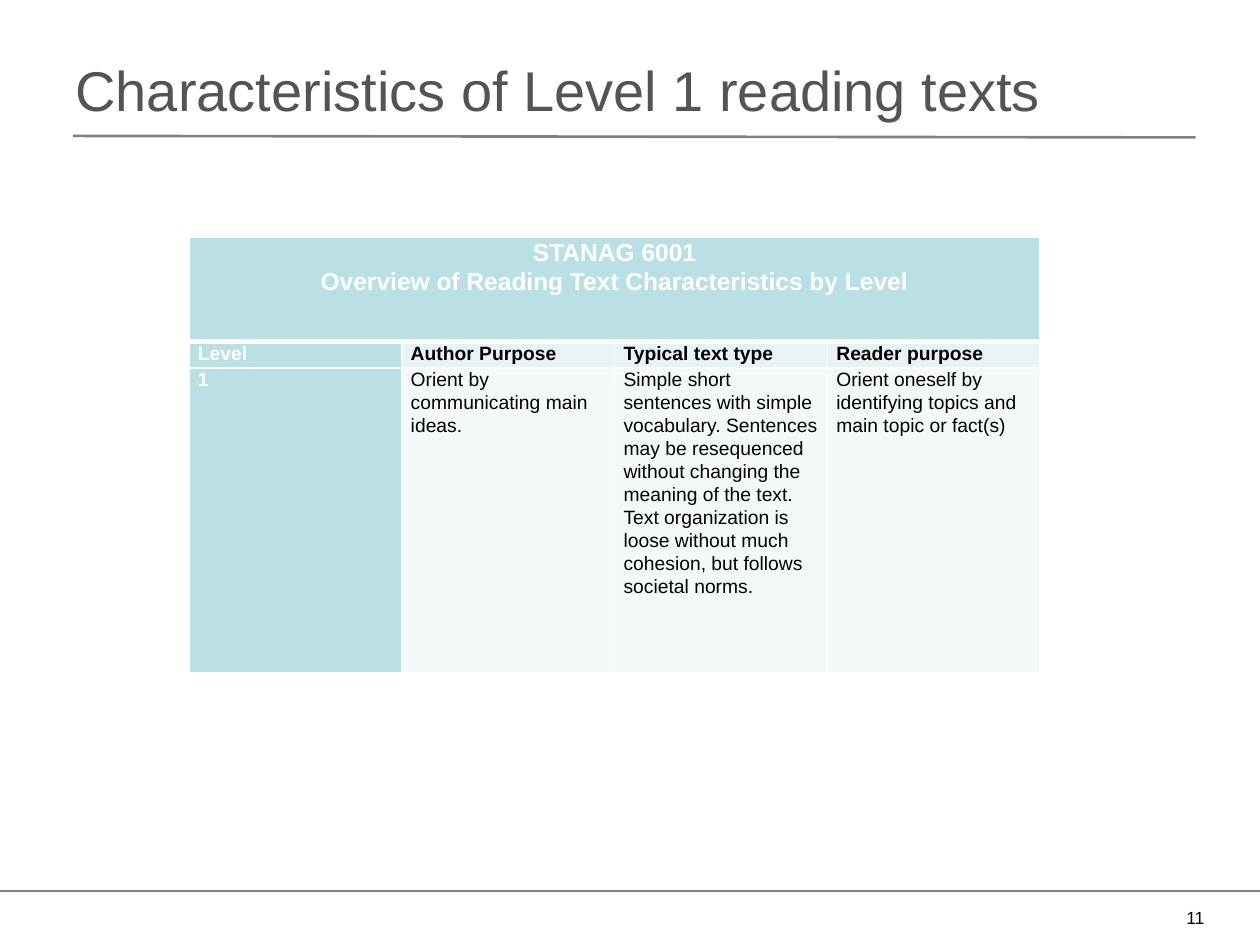
from lxml import etree
from pptx import Presentation
from pptx import util as u
from pptx.dml.color import RGBColor
from pptx.enum import shapes, text
from pptx.oxml.ns import qn

TITLE = "Characteristics of Level 1 reading texts"
PAGE_NUMBER = "11"
HEADING = ["STANAG 6001", "Overview of Reading Text Characteristics by Level"]
ROWS = [
    ["Level", "Author Purpose", "Typical text type", "Reader purpose"],
    [
        "1",
        "Orient by communicating main ideas.",
        "Simple short sentences with simple vocabulary. Sentences may be "
        "resequenced without changing the meaning of the text. Text organization "
        "is loose without much cohesion, but follows societal norms.",
        "Orient oneself by identifying topics and main topic or fact(s)",
    ],
]
RULES = [((1.47, 2.74), (24.1, 2.77), 1.5), ((0, 17.96), (25.4, 17.96), 0.75)]
TABLE_LEFT, TABLE_TOP, COLUMN_WIDTH = 3.81, 4.78, 4.29
ROW_HEIGHTS = [2.11, 0.53, 6.15]
THEME = {
    "font": "Arial",
    "title": "545454", "rule": "808080", "white": "FFFFFF", "black": "000000",
    "accent": "BBE0E3", "bands": ["E7F3F4", "F3F9FA"],
    "title_size": 32, "heading_size": 14, "body_size": 11, "number_size": 10,
}
ALIGN = text.PP_ALIGN


def write(frame, lines, size, color, bold=False, align=ALIGN.LEFT, spacing=1.0):
    """Fill a text frame with one uniformly styled paragraph per line."""
    frame.word_wrap = True
    frame.text = "\n".join(lines)
    for paragraph in frame.paragraphs:
        paragraph.alignment, paragraph.line_spacing = align, spacing
        font = paragraph.font
        font.name, font.size, font.bold = THEME["font"], u.Pt(size), bold
        font.color.rgb = RGBColor.from_string(color)


def add_text(slide, box, line, size, color, anchor, align):
    """Add a one-line text box."""
    frame = slide.shapes.add_textbox(*map(u.Cm, box)).text_frame
    frame.vertical_anchor = anchor
    write(frame, [line], size, color, align=align)


def add_rule(slide, start, end, width):
    """Add a thin grey rule without a shadow."""
    rule = slide.shapes.add_connector(
        shapes.MSO_CONNECTOR.STRAIGHT, *map(u.Cm, start + end))
    rule.line.color.rgb = RGBColor.from_string(THEME["rule"])
    rule.line.width = u.Pt(width)
    etree.SubElement(rule._element.spPr, qn("a:effectLst"))


def style_cell(cell, fill, top, bottom):
    """Set the borders, fill and margins of a cell."""
    properties = cell._tc.get_or_add_tcPr()
    for side, width in zip("LRTB", (1, 1, top, bottom)):
        border = etree.SubElement(properties, qn(f"a:ln{side}"), w=str(u.Pt(width)))
        solid = etree.SubElement(border, qn("a:solidFill"))
        etree.SubElement(solid, qn("a:srgbClr"), val=THEME["white"])
    cell.fill.solid()
    cell.fill.fore_color.rgb = RGBColor.from_string(fill)
    cell.margin_left = cell.margin_right = u.Cm(0.18)
    cell.margin_top = cell.margin_bottom = 0


def add_overview(slide):
    """Add the overview table with its merged heading."""
    count = len(ROWS[0])
    overview = slide.shapes.add_table(
        len(ROW_HEIGHTS), count, u.Cm(TABLE_LEFT), u.Cm(TABLE_TOP),
        u.Cm(COLUMN_WIDTH * count), u.Cm(sum(ROW_HEIGHTS))).table
    for column in overview.columns:
        column.width = u.Cm(COLUMN_WIDTH)
    for row, height in zip(overview.rows, ROW_HEIGHTS):
        row.height = u.Cm(height)

    for column in range(count):
        style_cell(overview.cell(0, column), THEME["accent"], 1, 3)
    heading = overview.cell(0, 0)
    heading.merge(overview.cell(0, count - 1))
    write(heading.text_frame, HEADING, THEME["heading_size"], THEME["white"],
          True, ALIGN.CENTER, 1.07)

    for r, (labels, band) in enumerate(zip(ROWS, THEME["bands"])):
        for c, label in enumerate(labels):
            cell = overview.cell(r + 1, c)
            is_level = c == 0
            style_cell(cell, THEME["accent"] if is_level else band,
                       3 if r == 0 else 1, 1)
            write(cell.text_frame, [label], THEME["body_size"],
                  THEME["white" if is_level else "black"],
                  bold=is_level or r == 0, spacing=1.07)


def main():
    """Build and save the slide."""
    deck = Presentation()
    deck.slide_width, deck.slide_height = u.Cm(25.4), u.Cm(19.05)
    slide = deck.slides.add_slide(deck.slide_layouts[6])
    for rule in RULES:
        add_rule(slide, *rule)
    add_text(slide, (1.27, 0.2, 22.86, 3.18), TITLE, THEME["title_size"],
             THEME["title"], text.MSO_ANCHOR.MIDDLE, ALIGN.LEFT)
    add_overview(slide)
    add_text(slide, (19.25, 18.16, 5.28, 1.07), PAGE_NUMBER, THEME["number_size"],
             THEME["black"], text.MSO_ANCHOR.TOP, ALIGN.RIGHT)
    deck.save("out.pptx")


if __name__ == "__main__":
    main()
